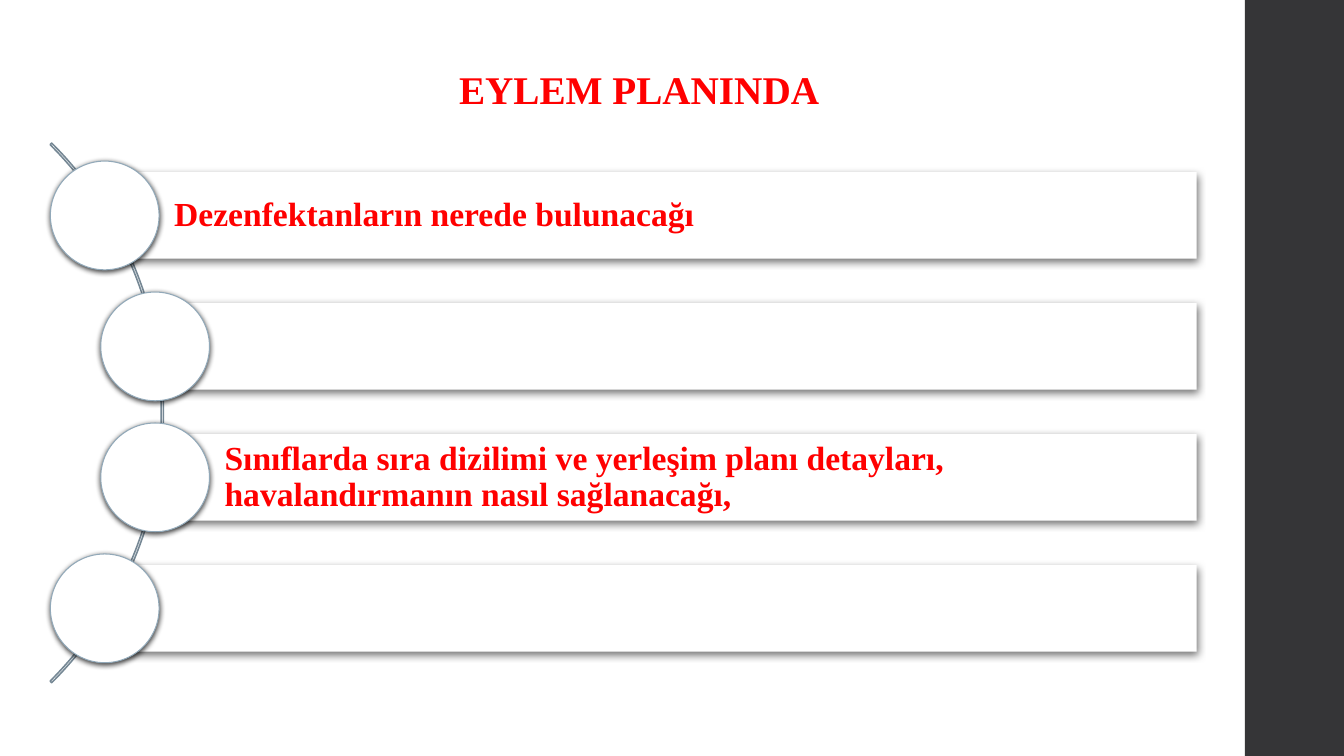
from lxml.etree import SubElement
from pptx import Presentation
from pptx.dml.color import RGBColor
from pptx.enum.shapes import MSO_SHAPE as Preset
from pptx.enum.text import MSO_ANCHOR as Anchor, PP_ALIGN as Align
from pptx.oxml.ns import qn
from pptx.util import Cm, Pt

WHITE = RGBColor(0xFF, 0xFF, 0xFF)
RED = RGBColor(0xFF, 0x00, 0x00)
CHARCOAL = RGBColor(0x35, 0x35, 0x37)
ARC_BLUE = RGBColor(0x75, 0x87, 0x94)
RING_BLUE = RGBColor(0x92, 0xA9, 0xB9)

# Layout in centimetres
CIRCLE = 2.74
BAR_HEIGHT = 2.18
BAR_RIGHT = 30.16
FIRST_TOP, PITCH = 4.06, 3.3
OUTER_LEFT, INNER_LEFT = 1.27, 2.54

STEPS = [
    (OUTER_LEFT, "Dezenfektanların nerede bulunacağı"),
    (INNER_LEFT, ""),
    (INNER_LEFT, "Sınıflarda sıra dizilimi ve yerleşim planı detayları, "
                 "havalandırmanın nasıl sağlanacağı,"),
    (OUTER_LEFT, ""),
]


class PlanSlide:
    font_name = "Times New Roman"

    def __init__(self, slide):
        self.slide = slide

    def shape(self, preset, left, top, width, height,
              fill=None, line=None, line_width=0.75):
        shape = self.slide.shapes.add_shape(
            preset, Cm(left), Cm(top), Cm(width), Cm(height))
        shape.shadow.inherit = False
        if fill is None:
            shape.fill.background()
        else:
            shape.fill.solid()
            shape.fill.fore_color.rgb = fill
        if line is None:
            shape.line.fill.background()
        else:
            shape.line.color.rgb = line
            shape.line.width = Pt(line_width)
        return shape

    def shadow(self, shape, opacity, blur, distance):
        effects = shape._element.spPr.find(qn("a:effectLst"))
        outer = SubElement(effects, qn("a:outerShdw"), blurRad=str(Pt(blur)),
                           dist=str(Pt(distance)), dir="5400000",
                           algn="ctr", rotWithShape="0")
        black = SubElement(outer, qn("a:srgbClr"), val="000000")
        SubElement(black, qn("a:alpha"), val=str(opacity * 1000))

    def fill_text(self, frame, text, size, align, spacing):
        frame.word_wrap = True
        paragraph = frame.paragraphs[0]
        paragraph.text = text
        paragraph.alignment = align
        paragraph.line_spacing = spacing
        font = paragraph.font
        font.name, font.size, font.bold = self.font_name, Pt(size), True
        font.color.rgb = RED

    def title(self, text, left, top, width, height):
        box = self.slide.shapes.add_textbox(
            Cm(left), Cm(top), Cm(width), Cm(height))
        self.fill_text(box.text_frame, text, 28, Align.CENTER, 1.5)

    def arc(self, left, top, diameter):
        arc = self.shape(Preset.BLOCK_ARC, left, top, diameter, diameter,
                         line=ARC_BLUE, line_width=1.1)
        # Sweep from 315 to 45 degrees, as a thin band
        for index, value in enumerate((189, 27, 0.003)):
            arc.adjustments[index] = value

    def step(self, left, top, text):
        bar_left = left + CIRCLE / 2
        bar = self.shape(Preset.RECTANGLE, bar_left,
                         top + (CIRCLE - BAR_HEIGHT) / 2,
                         BAR_RIGHT - bar_left, BAR_HEIGHT, WHITE)
        self.shadow(bar, 55, 6, 2)
        if text:
            frame = bar.text_frame
            frame.vertical_anchor = Anchor.MIDDLE
            frame.margin_left = Cm(1.75)
            frame.margin_right = frame.margin_top = frame.margin_bottom = Cm(0.18)
            self.fill_text(frame, text, 24, Align.LEFT, 0.9)
        circle = self.shape(Preset.OVAL, left, top, CIRCLE, CIRCLE,
                            WHITE, RING_BLUE)
        self.shadow(circle, 75, 4, 1.2)


def main():
    deck = Presentation()
    deck.slide_width, deck.slide_height = Cm(33.87), Cm(19.05)
    plan = PlanSlide(deck.slides.add_slide(deck.slide_layouts[6]))

    # Side band and heading
    plan.shape(Preset.RECTANGLE, 31.37, 0, 2.5, 19.05, CHARCOAL)
    plan.title("EYLEM PLANINDA", 2.77, 0.92, 26.67, 2)

    # Arc with the steps along it
    plan.arc(-15.11, 0.79, 19.23)
    for row, (left, text) in enumerate(STEPS):
        plan.step(left, FIRST_TOP + row * PITCH, text)

    deck.save("out.pptx")


if __name__ == "__main__":
    main()
